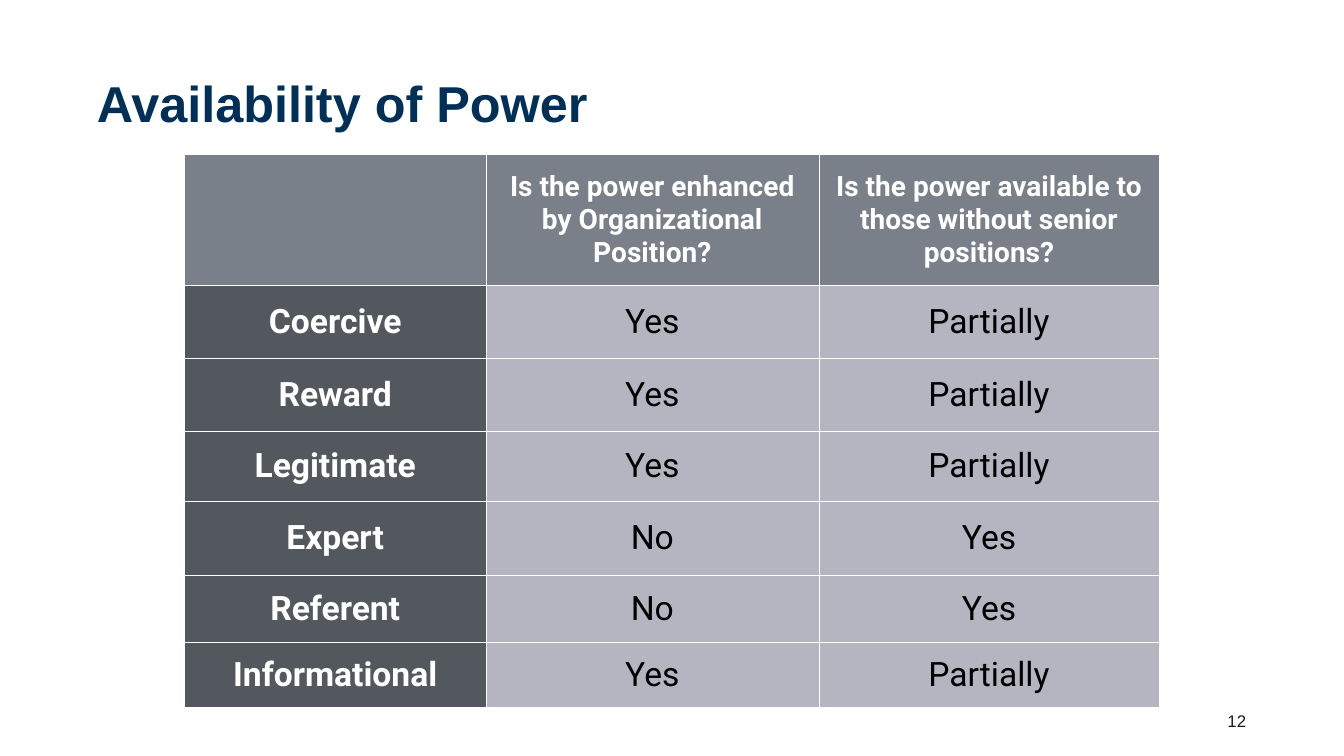
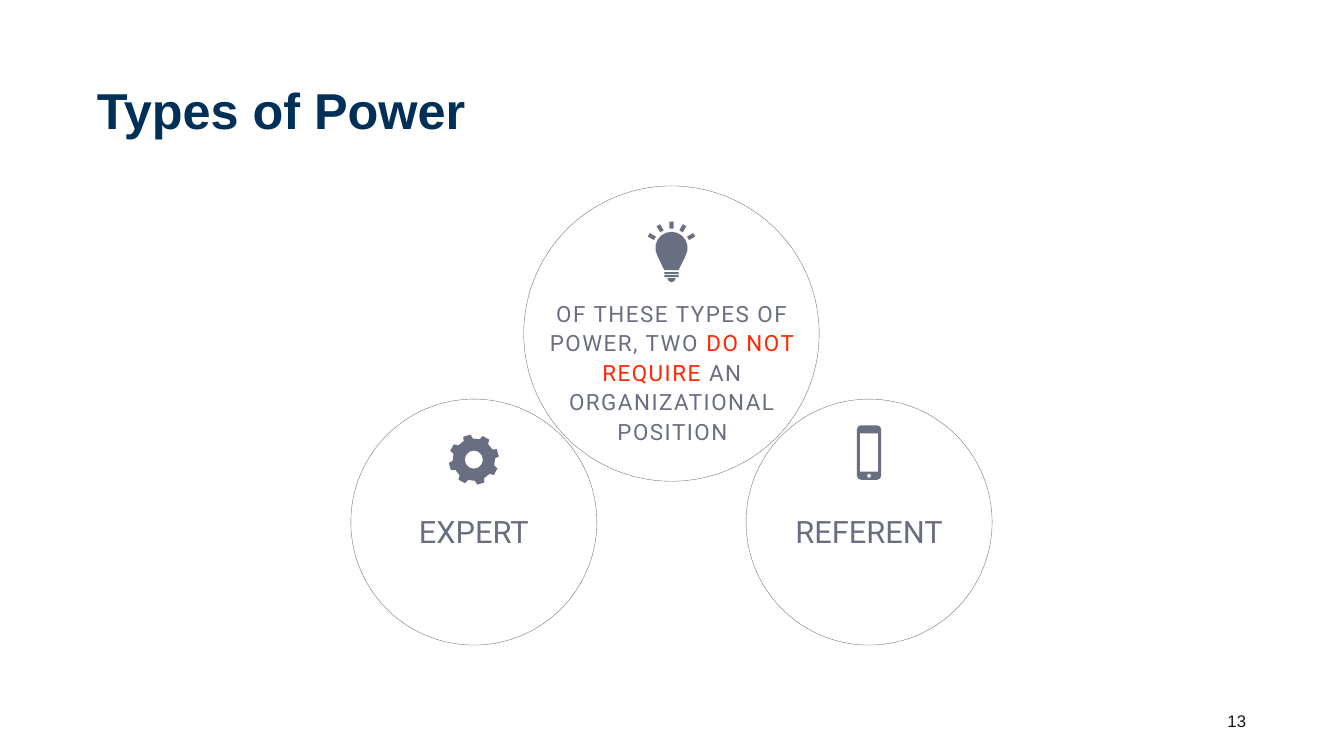
from math import cos, sin, radians

from lxml import etree
from pptx import Presentation
from pptx.dml.color import RGBColor
from pptx.enum import shapes as es, text as et
from pptx.oxml.ns import qn
from pptx.util import Inches, Pt

NAVY, INK, SLATE, RED = "003057", "191919", "696F80", "FF2600"
HEAD, SIDE, BODY, WHITE, BLACK = "798089", "53585F", "B5B5C1", "FFFFFF", "000000"
MID, TOP = et.MSO_ANCHOR.MIDDLE, et.MSO_ANCHOR.TOP
LEFT, CENTER, RIGHT = et.PP_ALIGN.LEFT, et.PP_ALIGN.CENTER, et.PP_ALIGN.RIGHT
SIDES = ("left", "top", "right", "bottom")

TITLE = dict(name="Arial", size=36, color=NAVY, bold=True)
NUMBER = dict(name="Arial", size=12, color=INK)
LABEL = dict(name="Roboto", size=22, color=SLATE)
CLAIM = dict(name="Roboto", size=16, color=SLATE, track=110)

COLS = [2.99, 3.3, 3.38]
ROWS = [1.3, 0.72, 0.73, 0.69, 0.74, 0.66, 0.65]
TABLE = [
    ("", "Is the power enhanced by Organizational Position?",
     "Is the power available to those without senior positions?"),
    ("Coercive", "Yes", "Partially"),
    ("Reward", "Yes", "Partially"),
    ("Legitimate", "Yes", "Partially"),
    ("Expert", "No", "Yes"),
    ("Referent", "No", "Yes"),
    ("Informational", "Yes", "Partially"),
]
MESSAGE = [
    ("OF THESE TYPES OF POWER, TWO ", CLAIM),
    ("DO NOT REQUIRE", {**CLAIM, "color": RED}),
    (" AN ORGANIZATIONAL POSITION", CLAIM),
]


def rgb(code):
    return RGBColor.from_string(code)


def fill(part, code):
    part.fill.solid()
    part.fill.fore_color.rgb = rgb(code)


def write(frame, runs, align=LEFT, anchor=MID, inset=0.05, wrap=True, **para):
    look = dict(word_wrap=wrap, auto_size=et.MSO_AUTO_SIZE.NONE, vertical_anchor=anchor)
    look.update({f"margin_{side}": Inches(inset) for side in SIDES})
    for key, value in look.items():
        setattr(frame, key, value)
    line = frame.paragraphs[0]
    for key, value in dict(alignment=align, **para).items():
        setattr(line, key, value)
    for words, style in runs:
        run = line.add_run()
        run.text = words
        for key, value in style.items():
            if key == "color":
                run.font.color.rgb = rgb(value)
            elif key == "track":
                run.font._element.set("spc", str(value))
            else:
                setattr(run.font, key, Pt(value) if key == "size" else value)


def label(slide, place, runs, **look):
    box = slide.shapes.add_textbox(*map(Inches, place))
    write(box.text_frame, runs, **look)


def start(prs, title, top, number):
    slide = prs.slides.add_slide(prs.slide_layouts[5])
    head = slide.shapes.title
    for key, value in dict(left=0.91, top=top, width=11.5, height=1.45).items():
        setattr(head, key, Inches(value))
    write(head.text_frame, [(title, TITLE)], line_spacing=0.9)
    label(slide, (12.11, 7.01, 0.3, 0.29), [(number, NUMBER)], align=RIGHT, wrap=False)
    return slide


def border(cell):
    props = cell._tc.get_or_add_tcPr()
    for spot, side in enumerate(("lnL", "lnR", "lnT", "lnB")):
        line = etree.Element(qn(f"a:{side}"), w=str(Pt(0.25)))
        paint = etree.SubElement(line, qn("a:solidFill"))
        etree.SubElement(paint, qn("a:srgbClr"), val=WHITE)
        props.insert(spot, line)


def grid(slide):
    place = (1.83, 1.53, sum(COLS), sum(ROWS))
    table = slide.shapes.add_table(len(ROWS), len(COLS), *map(Inches, place)).table
    table.horz_banding = False
    for col, width in zip(table.columns, COLS):
        col.width = Inches(width)
    for r, (row, height) in enumerate(zip(TABLE, ROWS)):
        table.rows[r].height = Inches(height)
        for c, words in enumerate(row):
            cell = table.cell(r, c)
            tone = HEAD if r == 0 else SIDE if c == 0 else BODY
            bold = tone != BODY
            style = dict(name="Roboto", size=24 if r else 20, bold=bold,
                         color=WHITE if bold else BLACK)
            fill(cell, tone)
            border(cell)
            if words:
                write(cell.text_frame, [(words, style)], align=CENTER)
            cell.vertical_anchor = MID
            for side in SIDES:
                setattr(cell, f"margin_{side}", Inches(0.06))


def polar(x, y, size, angle):
    return x + size * cos(radians(angle)), y + size * sin(radians(angle))


def arc(x, y, size, first=0, last=360, step=45):
    return [polar(x, y, size, a) for a in range(first, last + 1, step)]


def rect(x, y, w, h):
    return [(x, y), (x + w, y), (x + w, y + h), (x, y + h)]


def gear(x, y):
    teeth = [(0.21, -13), (0.25, -8.5), (0.25, 8.5), (0.21, 13)]
    edge = [polar(x, y, size, 45 * n - 16 + turn) for n in range(8) for size, turn in teeth]
    return [edge, arc(x, y, 0.09, 0, 330, 30)]


def phone(x, y):
    corners = [(1, 1), (-1, 1), (-1, -1), (1, -1)]
    case = [p for n, (dx, dy) in enumerate(corners)
            for p in arc(x + 0.08 * dx, y + 0.23 * dy, 0.04, 90 * n, 90 * n + 90)]
    return [case, rect(x - 0.09, y - 0.19, 0.18, 0.38), arc(x, y + 0.23, 0.02, 0, 315)]


def bulb(x, y):
    rays = []
    for angle in range(-150, -29, 30):
        ends = [polar(x, y, size, angle) for size in (0.19, 0.26)]
        (a, b), (c, d) = [[polar(*end, 0.02, angle + turn) for turn in (-90, 90)] for end in ends]
        rays.append([a, b, d, c])
    neck = [(0.13, 0.1), (0.09, 0.18), (0.07, 0.22)]
    glass = arc(x, y, 0.16, 150, 390, 20)
    glass += [(x + dx, y + dy) for dx, dy in neck]
    glass += [(x - dx, y + dy) for dx, dy in reversed(neck)]
    bars = [rect(x - 0.07, y + dy, 0.14, 0.02) for dy in (0.24, 0.27)]
    return rays + [glass] + bars + [arc(x, y + 0.3, 0.04, 0, 180)]


def icon(slide, outlines):
    first, *rest = [[(Inches(x), Inches(y)) for x, y in line] for line in outlines]
    pen = slide.shapes.build_freeform(*first[0], scale=1.0)
    pen.add_line_segments(first[1:], close=True)
    for line in rest:
        pen.move_to(*line[0])
        pen.add_line_segments(line[1:], close=True)
    shape = pen.convert_to_shape()
    shape.shadow.inherit = False
    fill(shape, SLATE)
    shape.line.fill.background()


def ring(slide, x, y, size):
    place = (x - size / 2, y - size / 2, size, size)
    shape = slide.shapes.add_shape(es.MSO_SHAPE.OVAL, *map(Inches, place))
    shape.shadow.inherit = False
    shape.fill.background()
    shape.line.color.rgb = rgb(SLATE)
    shape.line.width = Pt(0.25)


def main():
    prs = Presentation()
    prs.slide_width, prs.slide_height = Inches(13.33), Inches(7.5)

    grid(start(prs, "Availability of Power", 0.33, "12"))

    slide = start(prs, "Types of Power", 0.4, "13")
    for name, x, draw, y in [("EXPERT", 4.7, gear, 4.56), ("REFERENT", 8.62, phone, 4.49)]:
        ring(slide, x, 5.18, 2.44)
        icon(slide, draw(x, y))
        label(slide, (x - 0.88, 5.09, 1.76, 0.63), [(name, LABEL)], align=CENTER,
              anchor=TOP, inset=0, space_before=Pt(7))
    ring(slide, 6.66, 3.31, 2.93)
    icon(slide, bulb(6.66, 2.46))
    label(slide, (5.38, 2.9, 2.58, 1.44), MESSAGE, align=CENTER, anchor=TOP,
          line_spacing=1.1, space_before=Pt(21))
    prs.save("out.pptx")


if __name__ == "__main__":
    main()
